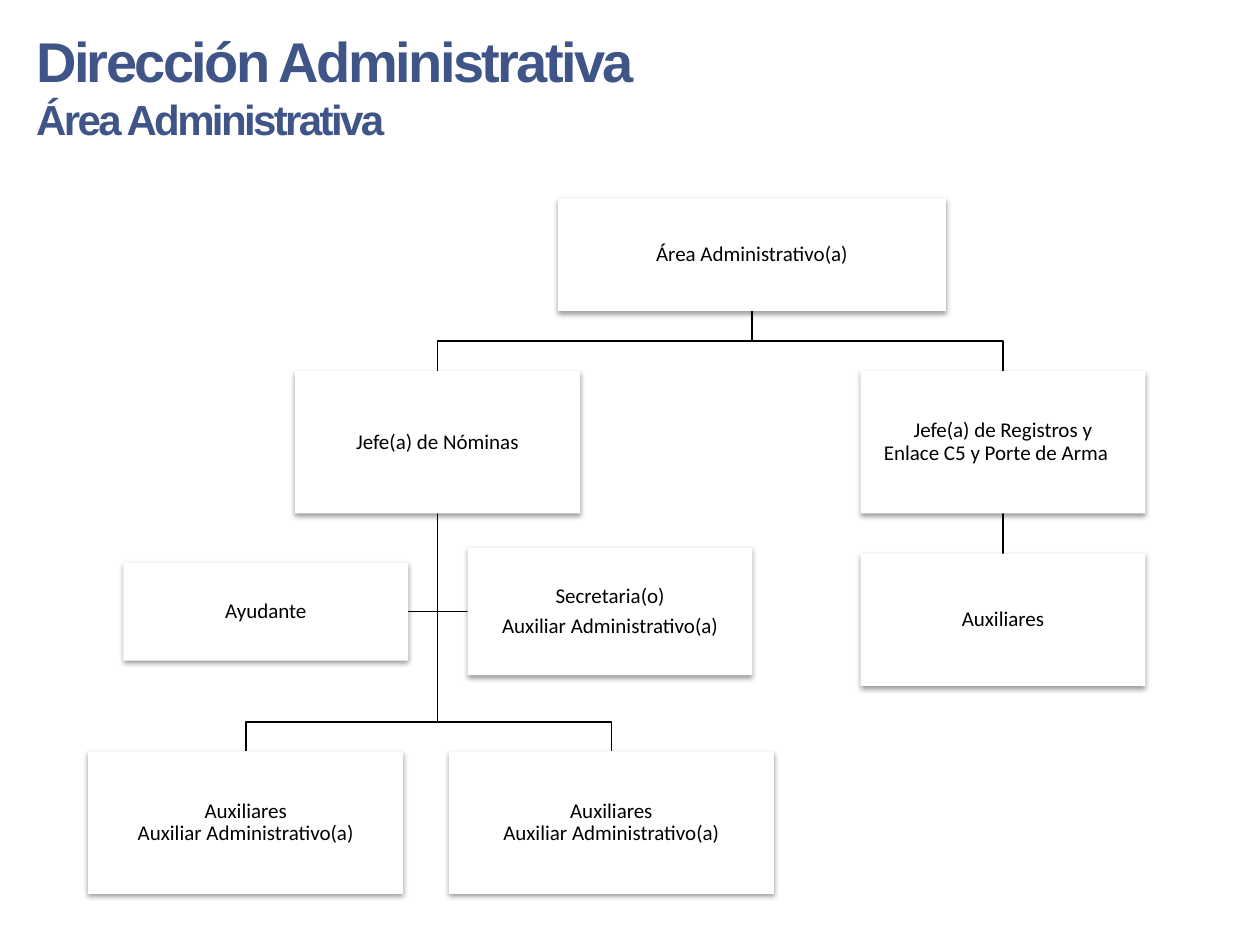
import lxml.etree
import pptx
import pptx.dml.color
import pptx.enum.shapes
import pptx.enum.text
import pptx.oxml.ns
import pptx.util

Cm = pptx.util.Cm
Pt = pptx.util.Pt
RGBColor = pptx.dml.color.RGBColor
qn = pptx.oxml.ns.qn

BLUE = RGBColor(0x3F, 0x55, 0x88)
BLACK = RGBColor(0, 0, 0)
WHITE = RGBColor(255, 255, 255)

BUS_GAP = 0.6
BOSS_W, BOSS_H = 5.74, 2.87
RIGHT_X, BOSS_Y, TEAM_Y = 15.57, 3.48, 11.15
ASSISTANT = "Auxiliar Administrativo(a)"

# name: (left, top, width, height, lines, space after in points)
NODES = {
    "area": (9.47, 0, 7.82, 2.27, ["Área Administrativo(a)"], 0),
    "nominas": (4.17, BOSS_Y, BOSS_W, BOSS_H, ["Jefe(a) de Nóminas"], 0),
    "team_left": (0, TEAM_Y, 6.35, BOSS_H, ["Auxiliares", ASSISTANT], 0),
    "team_right": (7.27, TEAM_Y, 6.55, BOSS_H, ["Auxiliares", ASSISTANT], 0),
    "ayudante": (0.71, 7.34, BOSS_W, 1.98, ["Ayudante"], 4.2),
    "secretaria": (7.65, 7.04, BOSS_W, 2.57, ["Secretaria(o)", ASSISTANT], 4.2),
    "registros": (RIGHT_X, BOSS_Y, BOSS_W, BOSS_H,
                  ["Jefe(a) de Registros y", "Enlace C5 y Porte de Arma"], 0),
    "auxiliares": (RIGHT_X, 7.16, BOSS_W, 2.67, ["Auxiliares"], 0),
}
BRANCHES = [("area", "registros"), ("nominas", "team_right"),
            ("nominas", "team_left"), ("area", "nominas")]


def add_title(s, left, top, width, height):
    """Place the two-line heading."""
    tf = s.shapes.add_textbox(Cm(left), Cm(top), Cm(width), Cm(height)).text_frame
    tf.word_wrap = True
    tf.auto_size = pptx.enum.text.MSO_AUTO_SIZE.SHAPE_TO_FIT_TEXT
    tf.text = "Dirección Administrativa\nÁrea Administrativa"
    for p, size in zip(tf.paragraphs, (32, 24)):
        font = p.runs[0].font
        font.name, font.size, font.bold = "Arial", Pt(size), True
        font.color.rgb = BLUE
        p.runs[0]._r.get_or_add_rPr().set("spc", "-150")


def add_node(s, left, top, width, height, lines, space_after):
    """Draw one white shadowed box with centred text."""
    sp = s.shapes.add_shape(pptx.enum.shapes.MSO_SHAPE.RECTANGLE,
                            Cm(left), Cm(top), Cm(width), Cm(height))
    sp.fill.solid()
    sp.fill.fore_color.rgb = WHITE
    sp.line.fill.background()
    sp.shadow.inherit = False
    effects = sp._element.spPr.find(qn("a:effectLst"))
    shadow = lxml.etree.SubElement(
        effects, qn("a:outerShdw"), blurRad=str(Pt(3.1)), dist=str(Pt(1.6)),
        dir="5400000", rotWithShape="0")
    color = lxml.etree.SubElement(shadow, qn("a:srgbClr"), val=str(BLACK))
    lxml.etree.SubElement(color, qn("a:alpha"), val="38000")
    tf = sp.text_frame
    tf.word_wrap = True
    tf.vertical_anchor = pptx.enum.text.MSO_ANCHOR.MIDDLE
    tf.margin_left = tf.margin_right = tf.margin_top = tf.margin_bottom = Cm(0.02)
    tf.text = "\n".join(lines)
    for p in tf.paragraphs:
        p.alignment = pptx.enum.text.PP_ALIGN.CENTER
        p.line_spacing = 0.9
        p.space_after = Pt(space_after)
        font = p.runs[0].font
        font.name, font.size = "Calibri", Pt(12)
        font.color.rgb = BLACK
    return sp


def add_link(s, points):
    """Draw a black line through points: a connector if straight, else a polyline."""
    points = [(Cm(x), Cm(y)) for x, y in points]
    if len(points) == 2:
        sp = s.shapes.add_connector(pptx.enum.shapes.MSO_CONNECTOR.STRAIGHT,
                                    *points[0], *points[1])
        lxml.etree.SubElement(sp._element.spPr, qn("a:effectLst"))
    else:
        builder = s.shapes.build_freeform(*points[0])
        builder.add_line_segments(points[1:], close=False)
        sp = builder.convert_to_shape()
        sp.fill.background()
        sp.shadow.inherit = False
    sp.line.color.rgb = BLACK
    sp.line.width = Pt(1)


def add_org_chart(s, left, top):
    """Place the links and then the boxes of the organisation chart."""
    boxes = {name: (left + x, top + y, w, h)
             for name, (x, y, w, h, *_) in NODES.items()}

    def bottom(name):
        x, y, w, h = boxes[name]
        return x + w / 2, y + h

    def head(name):
        x, y, w, _ = boxes[name]
        return x + w / 2, y

    add_link(s, [bottom("registros"), head("auxiliares")])
    for parent, child in BRANCHES:
        start, end = bottom(parent), head(child)
        bus = end[1] - BUS_GAP
        add_link(s, [start, (start[0], bus), (end[0], bus), end])
    trunk = bottom("nominas")
    for name in ("secretaria", "ayudante"):
        x, y, w, h = boxes[name]
        middle = y + h / 2
        side = x if x > trunk[0] else x + w
        add_link(s, [trunk, (trunk[0], middle), (side, middle)])
    shapes = {name: add_node(s, *boxes[name], *node[4:])
              for name, node in NODES.items()}
    p = shapes["registros"].text_frame.paragraphs[1]
    p._p.get_or_add_pPr().set("marR", str(Cm(0.28)))


def main():
    """Build and save the slide."""
    prs = pptx.Presentation()
    prs.slide_width, prs.slide_height = Cm(25.4), Cm(19.05)
    s = prs.slides.add_slide(prs.slide_layouts[6])
    add_title(s, 0.48, 0.41, 18.95, 2.64)
    add_org_chart(s, 1.78, 4)
    prs.save("out.pptx")


if __name__ == "__main__":
    main()
